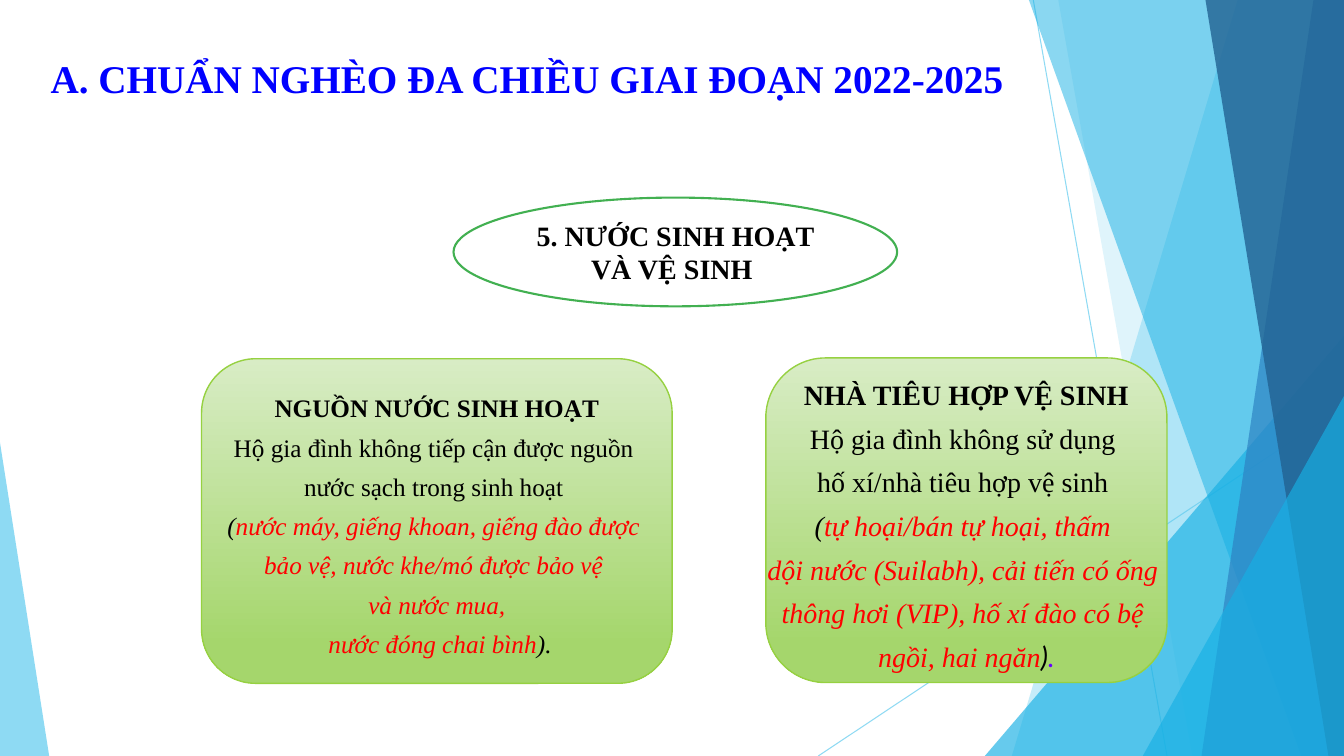
from lxml.etree import SubElement
from pptx import Presentation
from pptx.dml.color import RGBColor
from pptx.enum.shapes import MSO_CONNECTOR, MSO_SHAPE
from pptx.enum.text import MSO_ANCHOR, PP_ALIGN
from pptx.oxml.ns import qn
from pptx.util import Cm, Pt

WIDTH, HEIGHT = 33.87, 19.05
FONT = "Times New Roman"
COLORS = {
    "white": "FFFFFF", "black": "000000", "red": "FF0000", "blue": "0000FF",
    "violet": "6600FF", "sky": "5FCBEF", "cyan": "17B0E4", "steel": "2E83C3",
    "navy": "226292", "green": "42B051", "lime": "96D141",
    "card_top": "D8ECC5", "card_bottom": "A5D66C",
}

# Each line of a card is a list of (text, color) runs.
WATER_LINES = [
    [("NGUỒN NƯỚC SINH HOẠT", "black")],
    [("Hộ gia đình không tiếp cận được nguồn ", "black")],
    [("nước sạch trong sinh hoạt ", "black")],
    [("(", "black"), ("nước máy, giếng khoan, giếng đào được ", "red")],
    [("bảo vệ, nước khe/mó được bảo vệ ", "red")],
    [("và nước mua,", "red")],
    [(" nước đóng chai bình", "red"), (").", "black")],
]
TOILET_LINES = [
    [("NHÀ TIÊU HỢP VỆ SINH", "black")],
    [("Hộ gia đình không sử dụng ", "black")],
    [("hố xí/nhà tiêu hợp vệ sinh ", "black")],
    [("(", "black"), ("tự hoại/bán tự hoại, thấm ", "red")],
    [("dội nước (Suilabh), cải tiến có ống ", "red")],
    [("thông hơi (VIP), hố xí đào có bệ ", "red")],
    [("ngồi, hai ngăn", "red"), (")", "black", "Lato"), (".", "violet", "Lato")],
]


def rgb(name):
    return RGBColor.from_string(COLORS[name])


def set_alpha(color_format_parent, percent):
    """Make the solid color inside a fill or line element translucent."""
    color = next(color_format_parent.iter(qn("a:srgbClr")))
    SubElement(color, qn("a:alpha"), val=str(percent * 1000))


def fill_translucent(shape, color, percent):
    shape.shadow.inherit = False
    shape.fill.solid()
    shape.fill.fore_color.rgb = rgb(color)
    set_alpha(shape.fill._xPr, percent)
    shape.line.fill.background()


def add_ray(slide, x1, y1, x2, y2):
    ray = slide.shapes.add_connector(
        MSO_CONNECTOR.STRAIGHT, Cm(x1), Cm(y1), Cm(x2), Cm(y2))
    ray.line.width = Pt(0.75)
    ray.line.color.rgb = rgb("sky")
    properties = ray._element.spPr
    set_alpha(properties, 70)
    SubElement(properties, qn("a:effectLst"))


def add_band(slide, top_x, bottom_x, color, percent):
    """Full-height band from a slanted left edge to the right slide edge."""
    builder = slide.shapes.build_freeform(Cm(top_x), 0)
    corners = [(WIDTH, 0), (WIDTH, HEIGHT), (bottom_x, HEIGHT)]
    builder.add_line_segments([(Cm(x), Cm(y)) for x, y in corners])
    fill_translucent(builder.convert_to_shape(), color, percent)


def add_corner(slide, left, top, width, apex, color, percent):
    """Triangle standing on the bottom edge of the slide."""
    triangle = slide.shapes.add_shape(
        MSO_SHAPE.ISOSCELES_TRIANGLE,
        Cm(left), Cm(top), Cm(width), Cm(HEIGHT - top))
    triangle.adjustments[0] = apex
    fill_translucent(triangle, color, percent)


def add_backdrop(slide):
    add_ray(slide, 26.04, 0, 29.41, HEIGHT)
    add_ray(slide, WIDTH, 10.24, 20.62, HEIGHT)
    add_band(slide, 31.19, 25.5, "sky", 36)
    add_band(slide, 26.67, 30.05, "sky", 20)
    add_corner(slide, 24.82, 8.46, 9.05, 1, "cyan", 66)
    add_band(slide, 25.93, 32.79, "cyan", 50)
    add_band(slide, 33.1, 30.28, "steel", 70)
    add_band(slide, 30.38, 33.48, "navy", 80)
    add_corner(slide, 28.8, 9.98, 5.07, 1, "cyan", 66)
    add_corner(slide, 0, 11.15, 1.24, 0, "sky", 70)


def format_paragraph(paragraph, size, bold):
    paragraph.alignment = PP_ALIGN.CENTER
    paragraph.font.name = FONT
    paragraph.font.size = Pt(size)
    paragraph.font.bold = bold


def add_card(slide, box, corner, size, lines):
    """Rounded card: bold heading, two plain lines, then italic details."""
    card = slide.shapes.add_shape(MSO_SHAPE.ROUNDED_RECTANGLE, *map(Cm, box))
    card.adjustments[0] = corner
    card.shadow.inherit = False
    card.fill.gradient()
    card.fill.gradient_angle = 270
    stops = [(0, "card_top"), (0.88, "card_bottom")]
    for stop, (position, color) in zip(card.fill.gradient_stops, stops):
        stop.position = position
        stop.color.rgb = rgb(color)
    card.line.color.rgb = rgb("lime")
    card.line.width = Pt(1)

    frame = card.text_frame
    frame.word_wrap = False
    frame.vertical_anchor = MSO_ANCHOR.MIDDLE
    for index, line in enumerate(lines):
        paragraph = frame.add_paragraph() if index else frame.paragraphs[0]
        format_paragraph(paragraph, size, bold=index == 0)
        paragraph.font.italic = index >= 3
        paragraph.line_spacing = 1.3
        for text, color, *font_name in line:
            run = paragraph.add_run()
            run.text = text
            run.font.color.rgb = rgb(color)
            if font_name:
                run.font.name = font_name[0]


def add_topic(slide, box, text):
    topic = slide.shapes.add_shape(MSO_SHAPE.OVAL, *map(Cm, box))
    topic.shadow.inherit = False
    topic.fill.solid()
    topic.fill.fore_color.rgb = rgb("white")
    topic.line.color.rgb = rgb("green")
    topic.line.width = Pt(1.5)
    topic.text_frame.vertical_anchor = MSO_ANCHOR.MIDDLE
    paragraph = topic.text_frame.paragraphs[0]
    paragraph.text = text
    format_paragraph(paragraph, 20, bold=True)
    paragraph.font.color.rgb = rgb("black")


def add_title(slide, box, text):
    title = slide.shapes.add_textbox(*map(Cm, box))
    title.text_frame.word_wrap = True
    paragraph = title.text_frame.paragraphs[0]
    paragraph.text = text
    format_paragraph(paragraph, 28, bold=True)
    paragraph.font.color.rgb = rgb("blue")


def main():
    presentation = Presentation()
    presentation.slide_width = Cm(WIDTH)
    presentation.slide_height = Cm(HEIGHT)
    slide = presentation.slides.add_slide(presentation.slide_layouts[6])
    add_backdrop(slide)
    add_card(slide, (5.08, 9.04, 11.86, 8.18), 0.167, 18, WATER_LINES)
    add_card(slide, (19.3, 9.02, 10.11, 8.18), 0.184, 20, TOILET_LINES)
    add_topic(slide, (11.43, 4.98, 11.18, 2.74), "5. NƯỚC SINH HOẠT VÀ VỆ SINH ")
    add_title(slide, (0.79, 1.24, 24.97, 2.34),
              "A. CHUẨN NGHÈO ĐA CHIỀU GIAI ĐOẠN 2022-2025")
    presentation.save("out.pptx")


if __name__ == "__main__":
    main()
